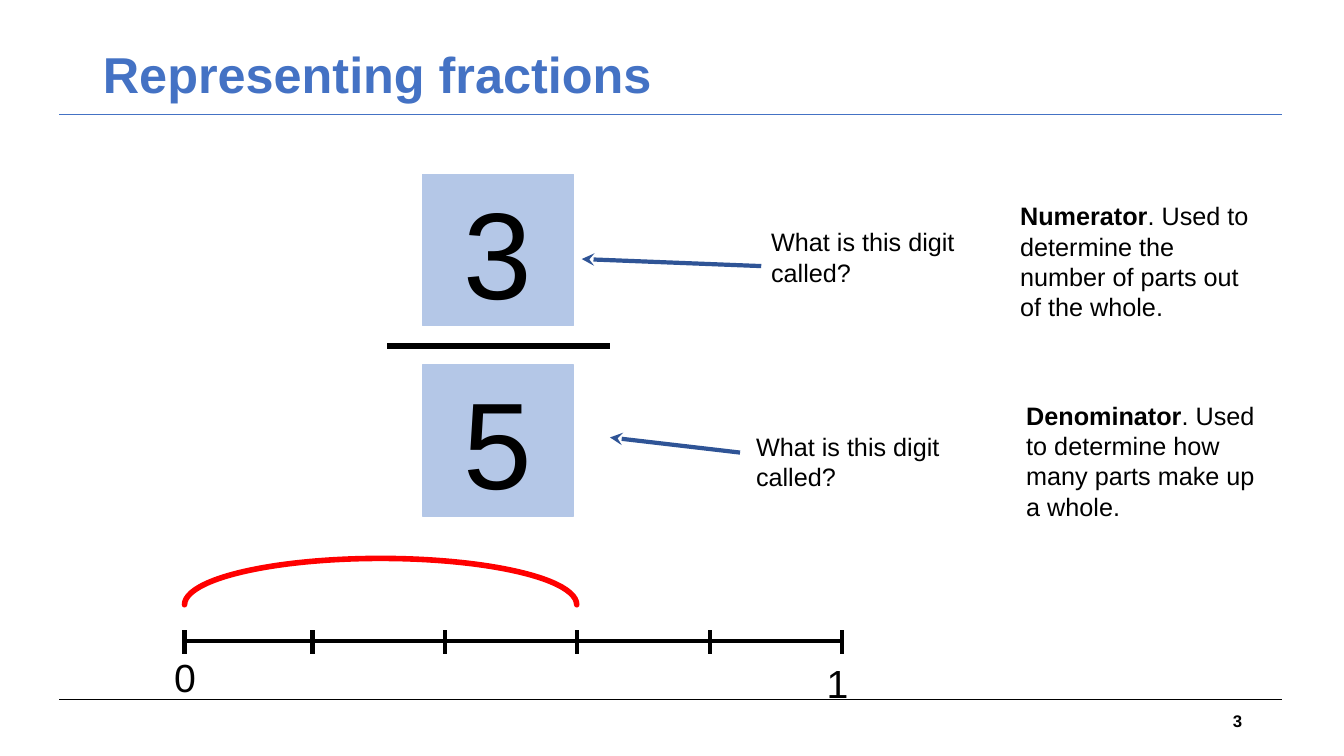
from typing import NamedTuple

from lxml import etree
from pptx import Presentation, util as u
from pptx.dml.color import RGBColor
from pptx.enum import shapes, text
from pptx.oxml import ns

PX = 9144  # EMU per px, 100 px to the inch
HUES = {
    "black": "000000",
    "blue": "4472C4",
    "navy": "2F5496",
    "pale": "B4C7E7",
    "red": "FF0000",
}
LEFT, RIGHT = text.PP_ALIGN.LEFT, text.PP_ALIGN.RIGHT
CENTER = text.PP_ALIGN.CENTER
TOP, MIDDLE = text.MSO_ANCHOR.TOP, text.MSO_ANCHOR.MIDDLE


class Box(NamedTuple):
    x: int
    y: int
    w: int
    h: int

    def emu(self) -> list[int]:
        return [n * PX for n in self]


class Line(NamedTuple):
    x1: int
    y1: int
    x2: int
    y2: int
    hue: str = "black"
    width: float = 3
    arrow: bool = False


class Digit(NamedTuple):
    value: str
    box: Box


class Note(NamedTuple):
    box: Box
    words: str
    term: str = ""
    size: int = 18
    pad: int = 5


def color(hue: str) -> RGBColor:
    return RGBColor.from_string(HUES[hue])


def write(shape, words: str, *, term: str = "", size: int = 18,
          hue: str = "black", bold: bool = False, align=LEFT, anchor=TOP,
          pad: int = 5, space: float = 1.0) -> None:
    """Fill a shape with one paragraph, led by an optional bold term."""
    frame = shape.text_frame
    frame.word_wrap = True
    frame.auto_size = text.MSO_AUTO_SIZE.NONE
    frame.vertical_anchor = anchor
    frame.margin_left = frame.margin_right = 10 * PX
    frame.margin_top = frame.margin_bottom = pad * PX
    para = frame.paragraphs[0]
    para.alignment = align
    para.line_spacing = space
    for part, heavy in ((term, True), (words, bold)):
        if part:
            run = para.add_run()
            run.text = part
            run.font.name = "Arial"
            run.font.size = u.Pt(size)
            run.font.bold = heavy
            run.font.color.rgb = color(hue)


def paint(shape, hue: str, width: float) -> None:
    shape.shadow.inherit = False
    shape.fill.solid()
    shape.fill.fore_color.rgb = color(hue)
    shape.line.color.rgb = color(hue)
    shape.line.width = u.Pt(width)


def rule(home, line: Line) -> None:
    ends = [n * PX for n in line[:4]]
    link = home.add_connector(shapes.MSO_CONNECTOR.STRAIGHT, *ends)
    link.line.color.rgb = color(line.hue)
    link.line.width = u.Pt(line.width)
    props = link._element.spPr
    if line.arrow:
        tip = etree.SubElement(props.find(ns.qn("a:ln")), ns.qn("a:tailEnd"))
        tip.set("type", "stealth")
    etree.SubElement(props, ns.qn("a:effectLst"))


def label(home, note: Note, **style) -> None:
    write(home.add_textbox(*note.box.emu()), note.words, term=note.term,
          size=note.size, pad=note.pad, **style)


RULES = [
    Line(59, 694, 1272, 694, width=0.75),
    Line(59, 114, 1272, 114, "blue", 0.75),
    Line(384, 343, 605, 343, width=4.5),
    Line(755, 264, 577, 257, "navy", arrow=True),
    Line(734, 449, 605, 434, "navy", arrow=True),
]
DIGITS = [
    Digit("3", Box(419, 173, 150, 150)),
    Digit("5", Box(419, 362, 150, 150)),
]
ASK = "What is this digit called?"
NOTES = [
    Note(Box(755, 220, 247, 71), ASK),
    Note(Box(1002, 189, 253, 141),
         ". Used to determine the number of parts out of the whole.",
         "Numerator", pad=10),
    Note(Box(740, 418, 262, 81), ASK, pad=10),
    Note(Box(1008, 392, 262, 131),
         ". Used to determine how many parts make up a whole.",
         "Denominator"),
]
TICKS = (183, 310, 441, 572, 704, 835)
ENDS = [
    Note(Box(163, 643, 40, 57), "0", size=28),
    Note(Box(810, 649, 110, 57), "1", size=28),
]


def main() -> None:
    deck = Presentation()
    deck.slide_width, deck.slide_height = 1333 * PX, 750 * PX
    slide = deck.slides.add_slide(deck.slide_layouts[5])
    home = slide.shapes

    # Title and page number
    title = home.title
    title.left, title.top, title.width, title.height = Box(
        92, 40, 1150, 145).emu()
    write(title, "Representing fractions", size=36, hue="blue", bold=True,
          pad=10, space=0.9)
    label(home, Note(Box(942, 695, 300, 40), "3", size=12),
          bold=True, align=RIGHT, anchor=MIDDLE)

    # Fraction with its notes
    for digit in DIGITS:
        tile = home.add_shape(shapes.MSO_SHAPE.RECTANGLE, *digit.box.emu())
        paint(tile, "pale", 1)
        write(tile, digit.value, size=88, align=CENTER, anchor=MIDDLE)
    for line in RULES:
        rule(home, line)
    for note in NOTES:
        label(home, note)

    # Number line from 0 to 1, cut into fifths
    scale = home.add_group_shape().shapes
    rule(scale, Line(TICKS[0], 636, TICKS[-1], 636))
    for x in TICKS:
        rule(scale, Line(x, 625, x, 649))
    for note in ENDS:
        label(scale, note)

    # Arc over three fifths
    span = Box(TICKS[0], 554, TICKS[3] - TICKS[0], 46)
    arc = scale.add_shape(shapes.MSO_SHAPE.CURVED_DOWN_ARROW, *span.emu())
    for i in range(3):
        arc.adjustments[i] = 0
    paint(arc, "red", 4)

    deck.save("out.pptx")


if __name__ == "__main__":
    main()
